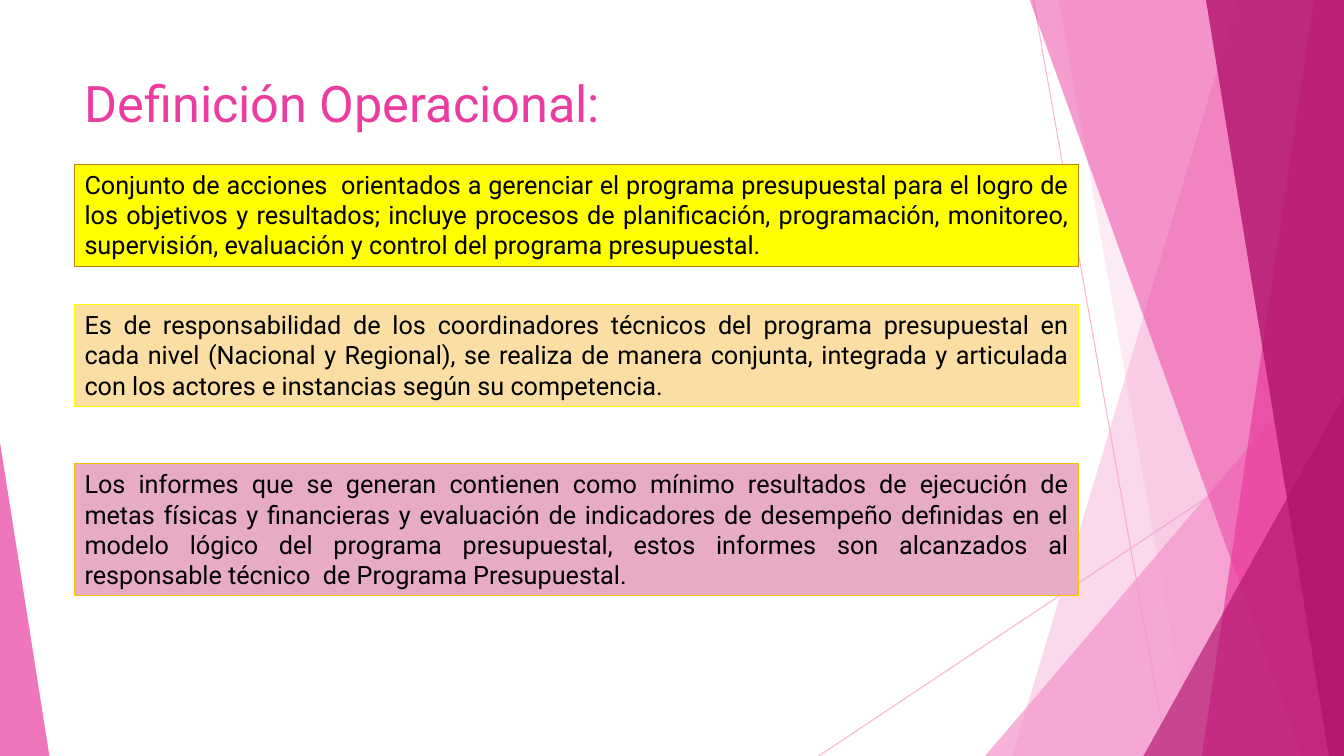
from lxml import etree
from pptx import Presentation
from pptx.dml.color import RGBColor
from pptx.enum import shapes, text
from pptx.oxml import ns
from pptx.util import Inches, Pt

LIGHT_PINK = RGBColor(0xF4, 0x96, 0xCB)
PINK = RGBColor(0xEB, 0x3D, 0x9F)
MAGENTA = RGBColor(0xB2, 0x13, 0x6D)
YELLOW = RGBColor(0xFF, 0xFF, 0x00)
OCHRE = RGBColor(0xBE, 0x84, 0x0B)
SAND = RGBColor(0xFA, 0xDE, 0xA3)
ROSE = RGBColor(0xE7, 0xAB, 0xC5)
GOLD = RGBColor(0xFF, 0xC0, 0x00)
BLACK = RGBColor(0x00, 0x00, 0x00)

WIDTH, HEIGHT = 13.33, 7.5
FACET_TOP = -0.01


def set_opacity(shape, percent):
    color = next(shape._element.spPr.iter(ns.qn("a:srgbClr")))
    etree.SubElement(color, ns.qn("a:alpha")).set("val", str(percent * 1000))


def write(frame, words, size, color, alignment):
    frame.word_wrap = True
    paragraph = frame.paragraphs[0]
    paragraph.text = words
    paragraph.alignment = alignment
    font = {"name": "Roboto", "size": Pt(size)}
    for name, value in font.items():
        setattr(paragraph.font, name, value)
    paragraph.font.color.rgb = color


presentation = Presentation()
presentation.slide_width = Inches(WIDTH)
presentation.slide_height = Inches(HEIGHT)
slide = presentation.slides.add_slide(presentation.slide_layouts[6])

# Thin diagonal lines
for ends in [(10.25, 0, 11.58, HEIGHT), (WIDTH, 4.03, 8.12, HEIGHT)]:
    line = slide.shapes.add_connector(
        shapes.MSO_CONNECTOR.STRAIGHT, *[Inches(end) for end in ends])
    line.line.color.rgb = LIGHT_PINK
    line.line.width = Pt(0.75)
    set_opacity(line, 70)
    etree.SubElement(line._element.spPr, ns.qn("a:effectLst"))

# Translucent facets: two numbers are the top and bottom of the slanted left
# edge, five are a triangle's left, top, width, height and apex position
facets = [
    ((12.28, 10.04), LIGHT_PINK, 36),
    ((10.5, 11.83), LIGHT_PINK, 20),
    ((9.77, 3.33, 3.56, 4.17, 1), LIGHT_PINK, 72),
    ((10.21, 12.91), PINK, 50),
    ((13.03, 11.92), PINK, 70),
    ((11.96, 13.18), MAGENTA, 80),
    ((11.34, 3.93, 1.99, 3.57, 1), MAGENTA, 66),
    ((0, 4.39, 0.49, 3.11, 0), PINK, 70),
]
for geometry, color, opacity in facets:
    if len(geometry) == 2:
        top_x, bottom_x = geometry
        corners = [(WIDTH, FACET_TOP), (WIDTH, HEIGHT), (bottom_x, HEIGHT)]
        builder = slide.shapes.build_freeform(Inches(top_x), Inches(FACET_TOP))
        builder.add_line_segments([(Inches(x), Inches(y)) for x, y in corners])
        facet = builder.convert_to_shape()
    else:
        *bounds, apex = geometry
        facet = slide.shapes.add_shape(
            shapes.MSO_SHAPE.ISOSCELES_TRIANGLE, *[Inches(b) for b in bounds])
        facet.adjustments[0] = apex
    facet.shadow.inherit = False
    facet.fill.solid()
    facet.fill.fore_color.rgb = color
    facet.line.fill.background()
    set_opacity(facet, opacity)

# Title
title = slide.shapes.add_textbox(
    Inches(0.74), Inches(0.67), Inches(9.4), Inches(1.44))
write(title.text_frame, "Definición Operacional:", 36, PINK, text.PP_ALIGN.LEFT)

# Definition boxes
boxes = [
    (1.63, 1.01, YELLOW, OCHRE,
     "Conjunto de acciones  orientados a gerenciar el programa presupuestal "
     "para el logro de los objetivos y resultados; incluye procesos de "
     "planificación, programación, monitoreo, supervisión, evaluación y "
     "control del programa presupuestal."),
    (3.02, 1.01, SAND, YELLOW,
     "Es de responsabilidad de los coordinadores técnicos del programa "
     "presupuestal en cada nivel (Nacional y Regional), se realiza de manera "
     "conjunta, integrada y articulada con los actores e instancias según su "
     "competencia."),
    (4.6, 1.31, ROSE, GOLD,
     "Los informes que se generan contienen como mínimo resultados de "
     "ejecución de metas físicas y financieras y evaluación de indicadores de "
     "desempeño definidas en el modelo lógico del programa presupuestal, "
     "estos informes son alcanzados al responsable técnico  de Programa "
     "Presupuestal."),
]
for top, height, fill, outline, words in boxes:
    box = slide.shapes.add_shape(
        shapes.MSO_SHAPE.RECTANGLE,
        Inches(0.74), Inches(top), Inches(9.96), Inches(height))
    box.shadow.inherit = False
    box.fill.solid()
    box.fill.fore_color.rgb = fill
    box.line.color.rgb = outline
    box.line.width = Pt(0.75)
    box.text_frame.vertical_anchor = text.MSO_ANCHOR.TOP
    box.text_frame.auto_size = text.MSO_AUTO_SIZE.SHAPE_TO_FIT_TEXT
    write(box.text_frame, words, 18, BLACK, text.PP_ALIGN.JUSTIFY)

presentation.save("out.pptx")
